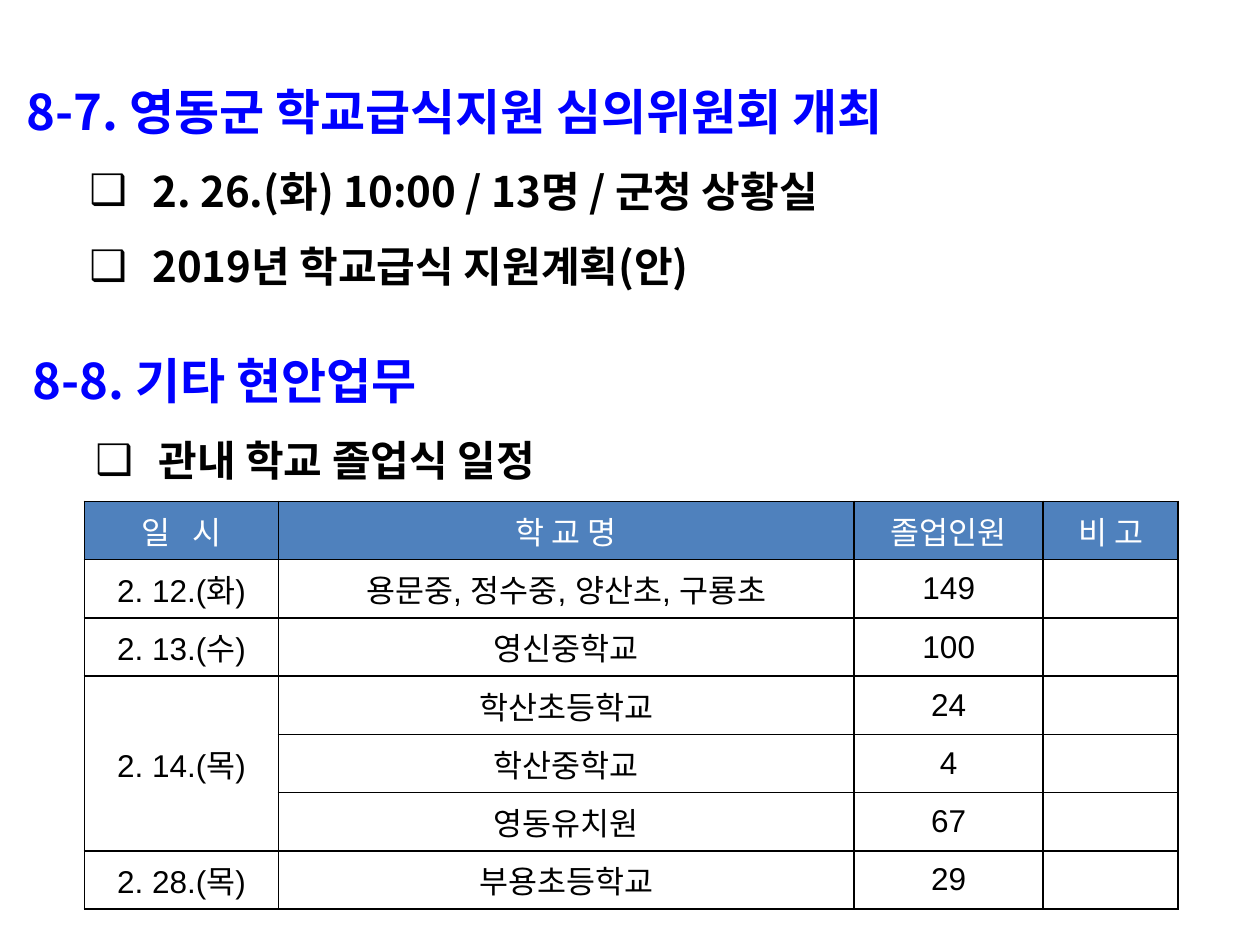
"""Build a slide on a school meal committee and a graduation schedule."""
from lxml.etree import SubElement
from pptx import Presentation
from pptx.dml.color import RGBColor
from pptx.enum.text import MSO_ANCHOR, MSO_AUTO_SIZE, PP_ALIGN
from pptx.oxml.ns import qn
from pptx.util import Inches, Pt

COLORS = {"heading": "0000FF", "text": "000000", "header": "4F81BD", "white": "FFFFFF"}
HEADING_FONT, TABLE_FONT = "Noto Sans CJK KR", "Arial"

COMMITTEE = ["8-7. 영동군 학교급식지원 심의위원회 개최",
             "2. 26.(화) 10:00 / 13명 / 군청 상황실",
             "2019년 학교급식 지원계획(안)"]
OTHER_WORK = ["8-8. 기타 현안업무", "관내 학교 졸업식 일정"]
COMMITTEE_AREA = (0.11, 0.36, 9.86, 2.03)
OTHER_AREA = (0.16, 2.5, 9.84, 4.88)

SCHEDULE = [
    ("일   시", "학 교 명", "졸업인원", "비 고"),
    ("2. 12.(화)", "용문중, 정수중, 양산초, 구룡초", "149", ""),
    ("2. 13.(수)", "영신중학교", "100", ""),
    ("2. 14.(목)", "학산초등학교", "24", ""),
    ("", "학산중학교", "4", ""),
    ("", "영동유치원", "67", ""),
    ("2. 28.(목)", "부용초등학교", "29", ""),
]
MERGED_ROWS = (3, 5)
COLUMN_WIDTHS = (1.54, 4.57, 1.5, 1.07)
ROW_HEIGHT = 3.07 / len(SCHEDULE)
TABLE_LEFT, TABLE_TOP = 0.67, 3.98


def set_font(para, name, size, color, bold):
    para.font.name, para.font.size, para.font.bold = name, Pt(size), bold
    para.font.color.rgb = RGBColor.from_string(COLORS[color])
    for span in para.runs:
        properties = span.font._element
        SubElement(properties, qn("a:ea"), typeface=HEADING_FONT)


def add_bullet(para):
    properties = para._p.get_or_add_pPr()
    properties.set("marL", str(Inches(1)))
    properties.set("indent", str(Inches(-0.5)))
    color = SubElement(properties, qn("a:buClr"))
    SubElement(color, qn("a:srgbClr"), val=COLORS["text"])
    SubElement(properties, qn("a:buFont"), typeface=TABLE_FONT)
    SubElement(properties, qn("a:buChar"), char="❑")


def fill_section(box, area, lines):
    box.left, box.top, box.width, box.height = map(Inches, area)
    frame = box.text_frame
    frame.text = "\n".join(lines)
    frame.word_wrap, frame.auto_size = True, MSO_AUTO_SIZE.NONE
    frame.vertical_anchor = MSO_ANCHOR.TOP
    for index, para in enumerate(frame.paragraphs):
        para.alignment, para.line_spacing = PP_ALIGN.LEFT, 1.5
        if index:
            add_bullet(para)
        size, color = (24, "text") if index else (28, "heading")
        set_font(para, HEADING_FONT, size, color, True)


def add_borders(cell):
    properties = cell._tc.get_or_add_tcPr()
    for side in ("lnL", "lnR", "lnT", "lnB"):
        line = SubElement(properties, qn(f"a:{side}"), w=str(Pt(1)))
        fill = SubElement(line, qn("a:solidFill"))
        SubElement(fill, qn("a:srgbClr"), val=COLORS["text"])


def format_cell(cell, text, is_header):
    cell.text = text
    cell.vertical_anchor = MSO_ANCHOR.MIDDLE
    para = cell.text_frame.paragraphs[0]
    para.alignment = PP_ALIGN.CENTER
    set_font(para, TABLE_FONT, 18, "white" if is_header else "text", False)
    add_borders(cell)
    if is_header:
        cell.fill.solid()
        cell.fill.fore_color.rgb = RGBColor.from_string(COLORS["header"])
    else:
        cell.fill.background()


def add_schedule(page):
    table = page.shapes.add_table(
        len(SCHEDULE), len(COLUMN_WIDTHS), Inches(TABLE_LEFT), Inches(TABLE_TOP),
        Inches(sum(COLUMN_WIDTHS)), Inches(ROW_HEIGHT * len(SCHEDULE))).table
    for column, width in zip(table.columns, COLUMN_WIDTHS):
        column.width = Inches(width)
    for row_index, values in enumerate(SCHEDULE):
        table.rows[row_index].height = Inches(ROW_HEIGHT)
        for column_index, text in enumerate(values):
            format_cell(table.cell(row_index, column_index), text, row_index == 0)
    first, last = MERGED_ROWS
    table.cell(first, 0).merge(table.cell(last, 0))


def main():
    deck = Presentation()
    deck.slide_width, deck.slide_height = Inches(10), Inches(7.5)
    page = deck.slides.add_slide(deck.slide_layouts[5])
    fill_section(page.shapes.title, COMMITTEE_AREA, COMMITTEE)
    box = page.shapes.add_textbox(*map(Inches, OTHER_AREA))
    fill_section(box, OTHER_AREA, OTHER_WORK)
    add_schedule(page)
    deck.save("out.pptx")


if __name__ == "__main__":
    main()
